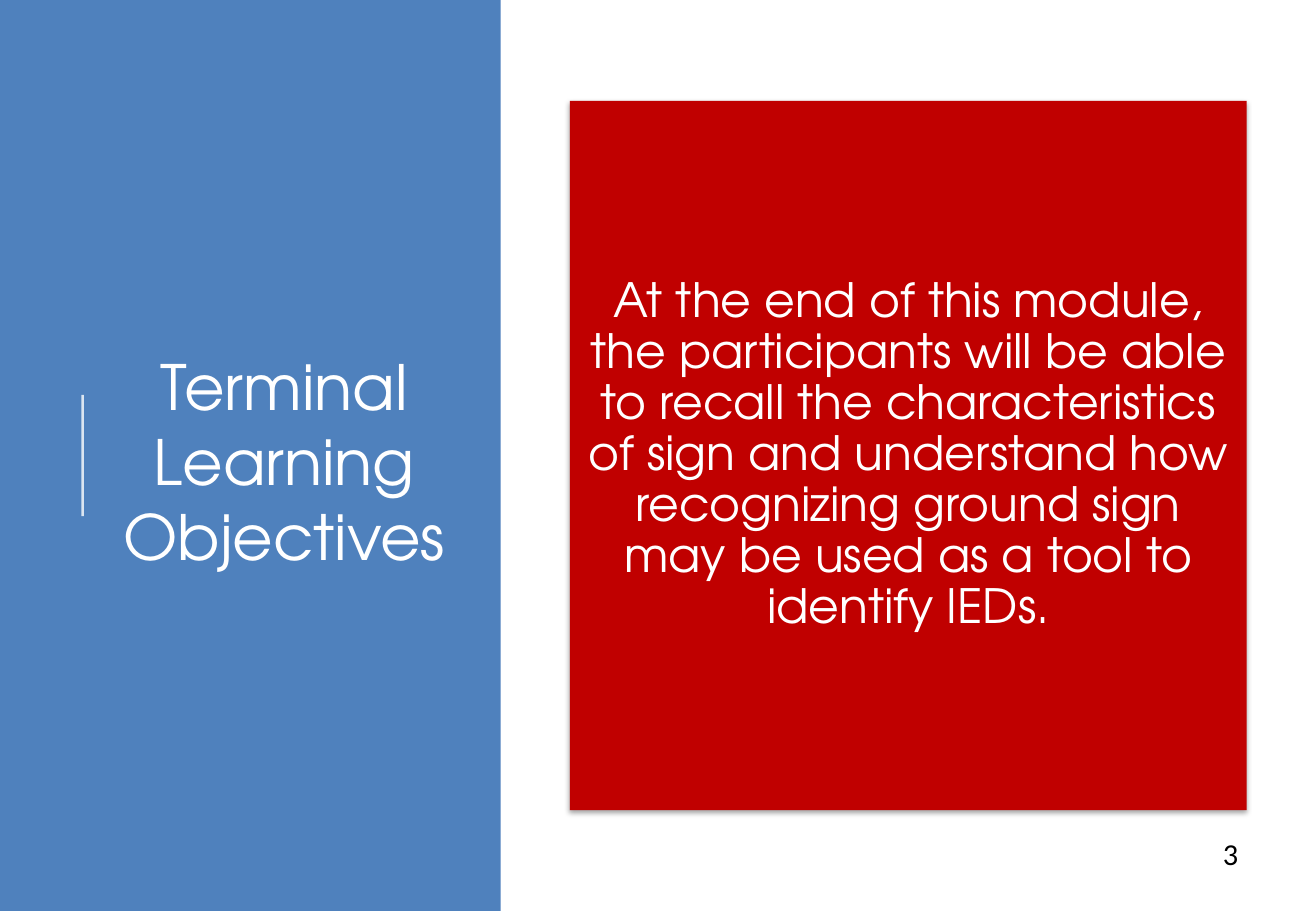
"""Builds the slide that states the terminal learning objectives."""
from dataclasses import dataclass

from lxml import etree
from pptx import Presentation
from pptx.dml.color import RGBColor
from pptx.enum.shapes import MSO_CONNECTOR, MSO_SHAPE
from pptx.enum.text import MSO_ANCHOR, PP_ALIGN
from pptx.oxml import parse_xml
from pptx.oxml.ns import nsdecls, qn
from pptx.util import Pt

RECT, STRAIGHT = MSO_SHAPE.RECTANGLE, MSO_CONNECTOR.STRAIGHT
CENTER, RIGHT = PP_ALIGN.CENTER, PP_ALIGN.RIGHT
TOP, MIDDLE = MSO_ANCHOR.TOP, MSO_ANCHOR.MIDDLE
PX = 9144
WIDTH, HEIGHT = 1083, 750


@dataclass(frozen=True)
class Theme:
    blue: str = "4F81BD"
    red: str = "C00000"
    white: str = "FFFFFF"
    black: str = "000000"
    display: str = "TeX Gyre Adventor"
    plain: str = "Calibri"
    title: int = 37
    body: int = 28
    number: int = 18


class Deck:
    def __init__(self, theme):
        self.theme = theme
        self.prs = Presentation()
        self.prs.slide_width, self.prs.slide_height = WIDTH * PX, HEIGHT * PX
        self.s = self.prs.slides.add_slide(self.prs.slide_layouts[6])

    def apply(self, target, values):
        for name, value in values.items():
            setattr(target, name, value)

    def rect(self, box, color):
        sp = self.s.shapes.add_shape(RECT, *(v * PX for v in box))
        sp.shadow.inherit = False
        sp.fill.solid()
        sp.fill.fore_color.rgb = RGBColor.from_string(color)
        sp.line.fill.background()
        return sp

    def shadow(self, sp, blur, dist, opacity):
        effects = sp._element.spPr.find(qn("a:effectLst"))
        effects.append(parse_xml(
            f'<a:outerShdw {nsdecls("a")} blurRad="{Pt(blur)}" dist="{Pt(dist)}" '
            f'dir="5400000" rotWithShape="0"><a:srgbClr val="{self.theme.black}">'
            f'<a:alpha val="{opacity * 1000}"/></a:srgbClr></a:outerShdw>'))

    def line(self, x1, y1, x2, y2, color, width, opacity):
        cxn = self.s.shapes.add_connector(STRAIGHT, *(v * PX for v in (x1, y1, x2, y2)))
        cxn.line.width = Pt(width)
        cxn.line.color.rgb = RGBColor.from_string(color)
        spPr = cxn._element.spPr
        clr = spPr.find(".//" + qn("a:srgbClr"))
        etree.SubElement(clr, qn("a:alpha")).set("val", str(opacity * 1000))
        etree.SubElement(spPr, qn("a:effectLst"))

    def textbox(self, box):
        return self.s.shapes.add_textbox(*(v * PX for v in box))

    def text(self, sp, words, font, size, color, align, anchor, frame=None, para=None):
        tf = sp.text_frame
        self.apply(tf, {"word_wrap": True, "vertical_anchor": anchor, **(frame or {})})
        p = tf.paragraphs[0]
        self.apply(p, {"alignment": align, **(para or {})})
        r = p.add_run()
        r.text = words
        self.apply(r.font, {"name": font, "size": Pt(size)})
        r.font.color.rgb = RGBColor.from_string(color)


def main():
    t = Theme()
    deck = Deck(t)
    deck.rect((0, 0, 412, HEIGHT), t.blue)
    deck.line(68, 425, 68, 325, t.white, 1.5, 80)
    deck.text(deck.textbox((84, 78, 300, 602)), "Terminal Learning Objectives",
              t.display, t.title, t.white, CENTER, MIDDLE)

    objective = deck.rect((469, 83, 557, 584), t.red)
    deck.shadow(objective, 3.1, 1.8, 35)
    sides = ("left", "top", "right", "bottom")
    deck.text(objective,
              "At the end of this module, the participants will be able to recall "
              "the characteristics of sign and understand how recognizing ground "
              "sign may be used as a tool to identify IEDs.",
              t.display, t.body, t.white, CENTER, MIDDLE,
              {f"margin_{side}": 12 * PX for side in sides}, {"line_spacing": 0.9})

    deck.text(deck.textbox((776, 683, 253, 40)), "3",
              t.plain, t.number, t.black, RIGHT, TOP)
    deck.prs.save("out.pptx")


if __name__ == "__main__":
    main()
